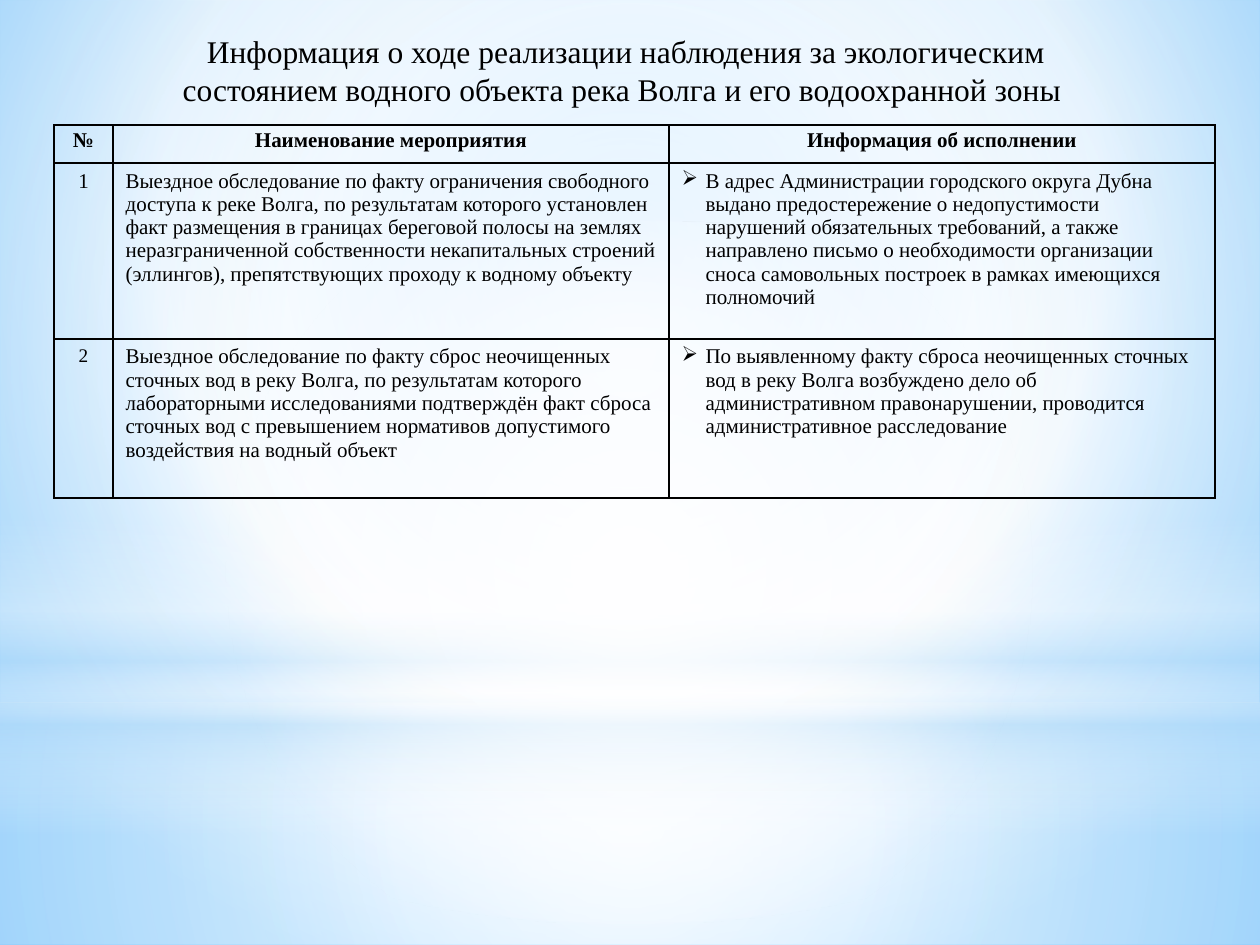
from lxml import etree
from pptx import Presentation
from pptx.dml.color import RGBColor
from pptx.enum.shapes import MSO_SHAPE
from pptx.enum.text import PP_ALIGN
from pptx.oxml.ns import qn
from pptx.util import Pt

RECT, OVAL = MSO_SHAPE.RECTANGLE, MSO_SHAPE.OVAL
CENTER, LEFT = PP_ALIGN.CENTER, PP_ALIGN.LEFT
BLACK = RGBColor(0, 0, 0)
WHITE = RGBColor(255, 255, 255)
SKY = RGBColor(0xB4, 0xDC, 0xFA)
PALE_BLUE = RGBColor(0x9E, 0xD5, 0xFF)
BRIGHT_BLUE = RGBColor(0x5B, 0xB9, 0xFF)
FONT = "Times New Roman"
EMU_PER_PX = 914400 / 126


def px(value):
    return round(value * EMU_PER_PX)


def set_gradient(fill, holder, stops, focus=None):
    """Stops are (position %, colour, opacity %); focus gives a circular gradient."""
    fill.solid()
    solid = holder.find(".//" + qn("a:solidFill"))
    gradient = etree.Element(qn("a:gradFill"), rotWithShape="1")
    stop_list = etree.SubElement(gradient, qn("a:gsLst"))
    for position, color, opacity in stops:
        stop = etree.SubElement(stop_list, qn("a:gs"), pos=str(position * 1000))
        tint = etree.SubElement(stop, qn("a:srgbClr"), val=str(color))
        if opacity < 100:
            etree.SubElement(tint, qn("a:alpha"), val=str(opacity * 1000))
    if focus:
        circle = etree.SubElement(gradient, qn("a:path"), path="circle")
        sides = {side: str(share * 1000) for side, share in zip("ltrb", focus)}
        etree.SubElement(circle, qn("a:fillToRect"), **sides)
    else:
        etree.SubElement(gradient, qn("a:lin"), ang="5400000", scaled="0")
    solid.getparent().replace(solid, gradient)


prs = Presentation()
prs.slide_width, prs.slide_height = px(1260), px(945)
slide = prs.slides.add_slide(prs.slide_layouts[6])

# Background
set_gradient(slide.background.fill, slide.element,
             [(0, PALE_BLUE, 100), (60, WHITE, 100), (100, BRIGHT_BLUE, 100)],
             (20, 10, 20, 60))

# Light layers: floor, sky, horizon, glow
MIDDLE = (50, 50, 50, 50)
light_layers = [
    (RECT, 0, 703, 1260, 242, [(0, WHITE, 91), (37, WHITE, 76), (100, SKY, 79)], MIDDLE),
    (RECT, 0, 0, 1260, 703, [(0, WHITE, 89), (48, WHITE, 62), (100, SKY, 79)], MIDDLE),
    (RECT, 0, 519, 1260, 315,
     [(0, WHITE, 0), (29, WHITE, 30), (45, SKY, 40), (55, WHITE, 26),
      (65, SKY, 60), (100, WHITE, 0)], None),
    (OVAL, 0, 221, 1260, 703, [(0, WHITE, 100), (56, WHITE, 0)], MIDDLE),
]
for kind, x, y, w, h, stops, focus in light_layers:
    layer = slide.shapes.add_shape(kind, px(x), px(y), px(w), px(h))
    layer.shadow.inherit = False
    layer.line.fill.background()
    set_gradient(layer.fill, layer.element.spPr, stops, focus)

# Table of measures
COLUMN_WIDTHS = [59, 556, 546]
ROW_HEIGHTS = [38, 176, 159]
measures = [
    ("№", "Наименование мероприятия", "Информация об исполнении"),
    ("1",
     "Выездное обследование по факту ограничения свободного доступа к реке Волга, "
     "по результатам которого установлен факт размещения в границах береговой полосы "
     "на землях неразграниченной собственности некапитальных строений (эллингов), "
     "препятствующих проходу к водному объекту",
     "В адрес Администрации городского округа Дубна выдано предостережение о "
     "недопустимости нарушений обязательных требований, а также направлено письмо о "
     "необходимости организации сноса самовольных построек в рамках имеющихся полномочий"),
    ("2",
     "Выездное обследование по факту сброс неочищенных сточных вод в реку Волга, "
     "по результатам которого лабораторными исследованиями подтверждён факт сброса "
     "сточных вод с превышением нормативов допустимого воздействия на водный объект",
     "По выявленному факту сброса неочищенных сточных вод в реку Волга возбуждено дело "
     "об административном правонарушении, проводится административное расследование"),
]
table = slide.shapes.add_table(3, 3, px(54), px(125), px(sum(COLUMN_WIDTHS)),
                               px(sum(ROW_HEIGHTS))).table
table.horz_banding = False
for column, width in zip(table.columns, COLUMN_WIDTHS):
    column.width = px(width)
for row, height in zip(table.rows, ROW_HEIGHTS):
    row.height = px(height)

for r, texts in enumerate(measures):
    for c, text in enumerate(texts):
        cell = table.cell(r, c)
        cell.fill.background()
        header = r == 0
        if header:
            cell.margin_left = cell.margin_right = px(9)
            cell.margin_top = cell.margin_bottom = 0
        paragraph = cell.text_frame.paragraphs[0]
        paragraph.alignment = CENTER if header or c == 0 else LEFT
        if header:
            paragraph.line_spacing = 1.15
        run = paragraph.add_run()
        run.text = text
        run.font.name = FONT
        run.font.size = Pt(11 if text == "2" else 12)
        run.font.bold = header
        run.font.color.rgb = BLACK

        # Arrow bullet in the results column
        if c == 2 and not header:
            properties = paragraph._p.get_or_add_pPr()
            properties.set("marL", str(px(24)))
            properties.set("indent", str(-px(24)))
            etree.SubElement(properties, qn("a:buChar"), char="➢")

        # Cell borders
        cell_properties = cell._tc.get_or_add_tcPr()
        for i, side in enumerate(("a:lnL", "a:lnR", "a:lnT", "a:lnB")):
            border = etree.Element(qn(side), w=str(Pt(1)))
            ink = etree.SubElement(border, qn("a:solidFill"))
            etree.SubElement(ink, qn("a:srgbClr"), val=str(BLACK))
            cell_properties.insert(i, border)

# Title
title = slide.shapes.add_textbox(px(115), px(26), px(1022), px(89)).text_frame
title.word_wrap = True
title.paragraphs[0].alignment = CENTER
title_run = title.paragraphs[0].add_run()
title_run.text = ("Информация о ходе реализации наблюдения за экологическим состоянием "
                  "водного объекта река Волга и его водоохранной зоны ")
title_run.font.name = FONT
title_run.font.size = Pt(18)
title_run.font.color.rgb = BLACK

prs.save("out.pptx")
